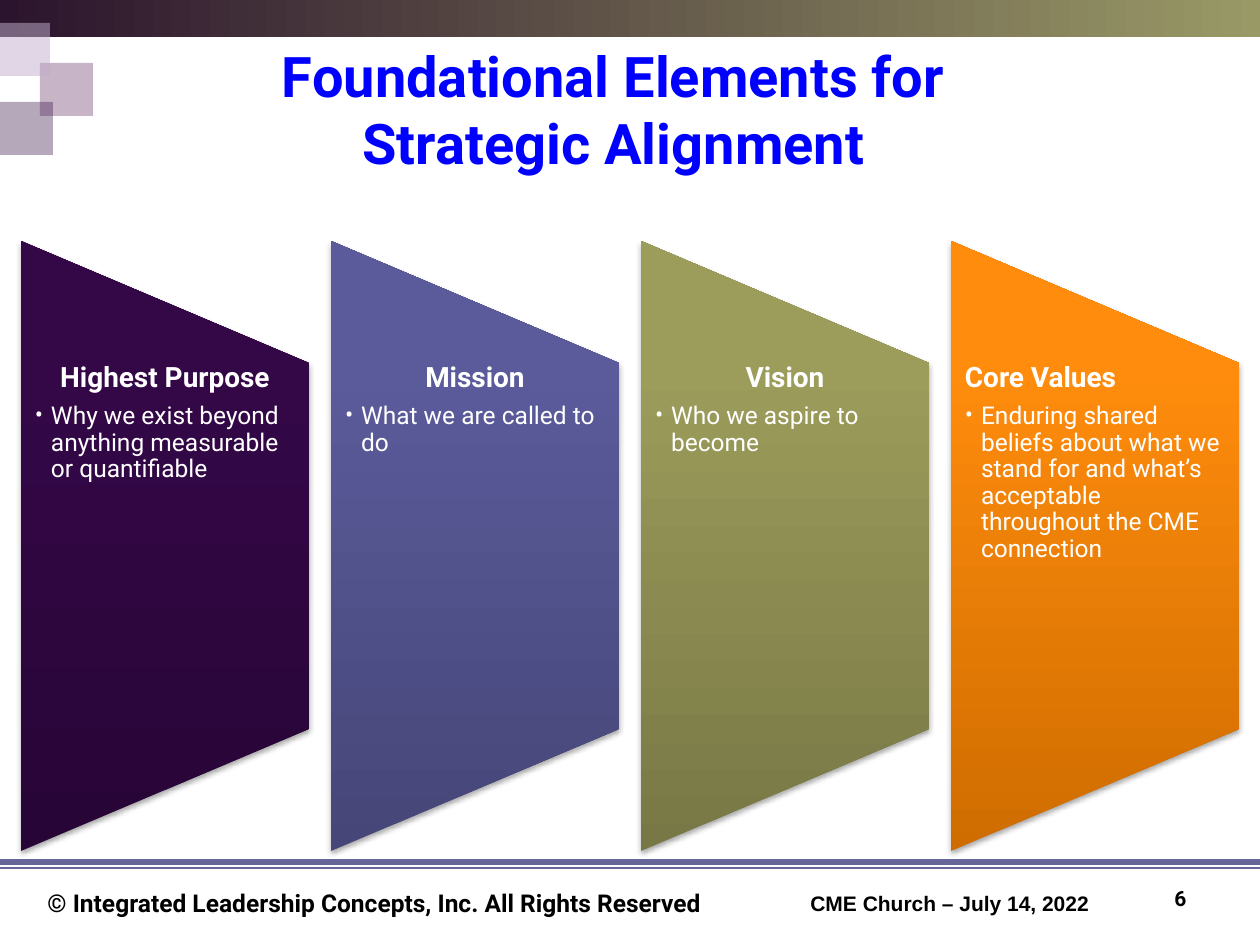
import copy
from dataclasses import dataclass

import pptx
import pptx.dml.color
import pptx.enum.shapes
import pptx.enum.text
import pptx.oxml
import pptx.oxml.ns
import pptx.util
from lxml import etree

PX = 914400 / 126
SHAPE = pptx.enum.shapes.MSO_SHAPE
ALIGN = pptx.enum.text.PP_ALIGN
ANCHOR = pptx.enum.text.MSO_ANCHOR
qn = pptx.oxml.ns.qn


@dataclass(frozen=True)
class Theme:
    font: str = "Roboto"
    date_font: str = "Arial"
    title: str = "0000FF"
    ink: str = "000000"
    light: str = "FFFFFF"
    rule: str = "666699"
    banner: tuple = ((0, "2B142D"), (100, "999966"))
    title_size: int = 32
    heading_size: int = 16
    body_size: int = 14
    small_size: int = 12


@dataclass(frozen=True)
class Square:
    left: int
    top: int
    color: str
    opacity: int


@dataclass(frozen=True)
class Pillar:
    heading: str
    detail: str
    shades: tuple
    align: ALIGN = ALIGN.CENTER


THEME = Theme()

SQUARES = (
    Square(40, 63, "663366", 36),
    Square(-3, 23, "C3AFCC", 51),
    Square(0, 102, "330F42", 36),
)

PILLARS = (
    Pillar("Highest Purpose", "Why we exist beyond anything measurable or quantifiable",
           ("280537", "340747", "350649")),
    Pillar("Mission", "What we are called to do", ("464678", "5B5B9C", "5B5B9E")),
    Pillar("Vision", "Who we aspire to become", ("787846", "9C9C5B", "9E9E5B")),
    Pillar("Core Values",
           "Enduring shared beliefs about what we stand for and what’s acceptable "
           "throughout the CME connection",
           ("CF6D00", "FF8C0D", "FF8D0F"), ALIGN.LEFT),
)


def px(length: float) -> int:
    return round(length * PX)


def rgb(color: str) -> pptx.dml.color.RGBColor:
    return pptx.dml.color.RGBColor.from_string(color)


def add(parent, tag: str, **attributes: str):
    return etree.SubElement(parent, qn(tag), attributes)


def place(shape, left: int, top: int, width: int, height: int) -> None:
    shape.left, shape.top = px(left), px(top)
    shape.width, shape.height = px(width), px(height)


def write(paragraph, text: str, *, size: int, color: str, font: str = THEME.font,
          bold: bool = True, align: ALIGN = ALIGN.LEFT) -> None:
    paragraph.text = text
    paragraph.alignment = align
    paragraph.space_before = pptx.util.Pt(0)
    for run in paragraph.runs:
        run.font.name, run.font.size, run.font.bold = font, pptx.util.Pt(size), bold
        run.font.color.rgb = rgb(color)
    # Line breaks take the same type size as the words around them
    for line_break in paragraph._p.findall(qn("a:br")):
        line_break.append(copy.deepcopy(paragraph.runs[0]._r.find(qn("a:rPr"))))


def add_shape(slide, kind: SHAPE, left: int, top: int, width: int, height: int):
    shape = slide.shapes.add_shape(kind, px(left), px(top), px(width), px(height))
    shape.shadow.inherit = False
    shape.line.fill.background()
    return shape


def fill_gradient(shape, stops: tuple, angle: int) -> None:
    shape.fill.gradient()
    gradient = shape.element.spPr.find(qn("a:gradFill"))
    gradient.set("rotWithShape", "0")
    stop_list = gradient.find(qn("a:gsLst"))
    for stop in list(stop_list):
        stop_list.remove(stop)
    for position, color in stops:
        stop = add(stop_list, "a:gs", pos=str(position * 1000))
        add(stop, "a:srgbClr", val=color)
    direction = gradient.find(qn("a:lin"))
    direction.set("ang", str(angle * 60000))
    direction.set("scaled", "0")


def add_square(slide, square: Square) -> None:
    shape = add_shape(slide, SHAPE.RECTANGLE, square.left, square.top, 53, 53)
    shape.fill.solid()
    shape.fill.fore_color.rgb = rgb(square.color)
    color = shape.element.spPr.find(qn("a:solidFill")).find(qn("a:srgbClr"))
    add(color, "a:alpha", val=str(square.opacity * 1000))


def add_rule(slide, y: int, weight: float) -> None:
    rule = slide.shapes.add_connector(
        pptx.enum.shapes.MSO_CONNECTOR.STRAIGHT, 0, px(y), px(1260), px(y))
    rule.line.color.rgb = rgb(THEME.rule)
    rule.line.width = pptx.util.Pt(weight)
    add(rule.element.spPr, "a:effectLst")


def add_label(slide, text: str, left: int, top: int, width: int, height: int,
              anchor: ANCHOR, **text_format) -> None:
    frame = slide.shapes.add_textbox(px(left), px(top), px(width), px(height)).text_frame
    frame.word_wrap = True
    frame.vertical_anchor = anchor
    write(frame.paragraphs[0], text, color=THEME.ink, **text_format)


def add_pillar(slide, pillar: Pillar, body, left: int) -> None:
    width, height, top = 288, 610, 241
    # The panel is a trapezoid turned a quarter left about its centre
    panel = add_shape(slide, SHAPE.FLOWCHART_MANUAL_OPERATION,
                      left + (width - height) // 2, top + (height - width) // 2,
                      height, width)
    panel.rotation = 270
    fill_gradient(panel, tuple(zip((0, 80, 100), pillar.shades)), 270)
    shadow = add(panel.element.spPr.find(qn("a:effectLst")), "a:outerShdw",
                 blurRad="40000", dist="23000", dir="5400000", rotWithShape="0")
    add(add(shadow, "a:srgbClr", val="000000"), "a:alpha", val="35000")

    # The words lie over the panel, in the middle three fifths
    slide.shapes.element.append(body.element)
    place(body, left, top + height // 5, width, height * 3 // 5)
    frame = body.text_frame
    frame.word_wrap = True
    frame.auto_size = pptx.enum.text.MSO_AUTO_SIZE.NONE
    frame.vertical_anchor = ANCHOR.TOP
    frame.margin_left = frame.margin_right = px(14)
    frame.margin_top = frame.margin_bottom = 0

    heading, detail = frame.paragraphs[0], frame.add_paragraph()
    write(heading, pillar.heading, size=THEME.heading_size, color=THEME.light,
          align=pillar.align)
    write(detail, pillar.detail, size=THEME.body_size, color=THEME.light, bold=False)
    detail.level = 1
    for paragraph, indent, after in ((heading, 0, 6), (detail, 16, 2)):
        paragraph.line_spacing = 0.9
        paragraph.space_after = pptx.util.Pt(after)
        properties = paragraph._p.get_or_add_pPr()
        properties.set("marL", str(px(indent)))
        properties.set("indent", str(-px(indent)))
        if indent:
            add(properties, "a:buFont", typeface=THEME.font)
            add(properties, "a:buChar", char="•")
        else:
            add(properties, "a:buNone")


def main() -> None:
    deck = pptx.Presentation()
    deck.slide_width, deck.slide_height = px(1260), px(945)
    slide = deck.slides.add_slide(deck.slide_layouts.get_by_name("Comparison"))

    # Banner, corner squares and footer rules
    banner = add_shape(slide, SHAPE.RECTANGLE, 0, 0, 1260, 37)
    fill_gradient(banner, THEME.banner, 0)
    for square in SQUARES:
        add_square(slide, square)
    add_rule(slide, 868, 0.75)
    add_rule(slide, 862, 3.25)

    # Title
    title = slide.shapes.title
    place(title, 95, 50, 1051, 117)
    title.text_frame.auto_size = pptx.enum.text.MSO_AUTO_SIZE.NONE
    title.text_frame.vertical_anchor = ANCHOR.MIDDLE
    write(title.text_frame.paragraphs[0], "Foundational Elements for \nStrategic Alignment ",
          size=THEME.title_size, color=THEME.title, align=ALIGN.CENTER)

    # Four pillars
    for index, pillar in enumerate(PILLARS):
        add_pillar(slide, pillar, slide.placeholders[index + 1], 21 + 310 * index)

    # Footer
    add_label(slide, "© Integrated Leadership Concepts, Inc. All Rights Reserved",
              35, 882, 777, 42, ANCHOR.TOP, size=THEME.body_size)
    add_label(slide, "CME Church – July 14, 2022", 798, 882, 340, 40, ANCHOR.BOTTOM,
              size=THEME.small_size, font=THEME.date_font)
    add_label(slide, "6", 1144, 873, 73, 50, ANCHOR.MIDDLE,
              size=THEME.small_size, align=ALIGN.CENTER)

    deck.save("out.pptx")


if __name__ == "__main__":
    main()
